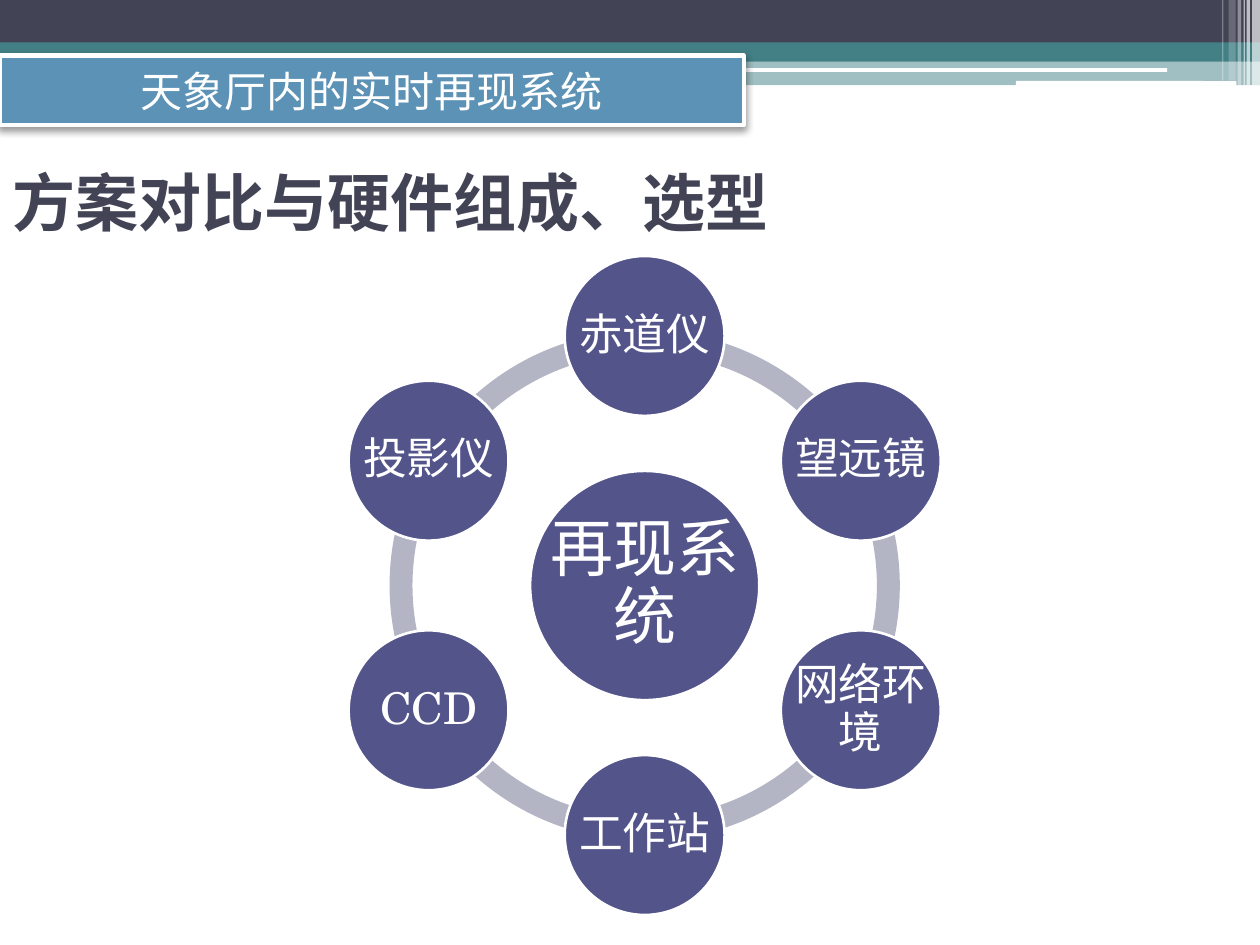
from math import cos, radians, sin

from lxml import etree
from pptx import Presentation
from pptx.dml.color import RGBColor
from pptx.enum.shapes import MSO_SHAPE
from pptx.enum.text import MSO_ANCHOR, MSO_AUTO_SIZE, PP_ALIGN
from pptx.oxml.ns import qn
from pptx.util import Pt

RECT, ROUND = MSO_SHAPE.RECTANGLE, MSO_SHAPE.ROUNDED_RECTANGLE
OVAL, ARC = MSO_SHAPE.OVAL, MSO_SHAPE.BLOCK_ARC
LEFT, CENTER = PP_ALIGN.LEFT, PP_ALIGN.CENTER
MIDDLE, NO_FIT = MSO_ANCHOR.MIDDLE, MSO_AUTO_SIZE.NONE

COLORS = {"dark": "424456", "teal": "438086", "white": "FFFFFF", "banner": "5C92B5",
          "ring": "B3B4C4", "node": "53548A", "black": "000000"}
CJK = "Noto Sans CJK SC"
SERIF = "TeX Gyre Schola"

BARS = [
    (0, 28.8, 720, 6.5, "teal", 50),
    (0, 0, 720, 24.5, "dark", 100),
    (0, 24.3, 720, 7.2, "teal", 100),
    (426, 28, 294, 7.2, "teal", 100),
    (426, 35.2, 294, 13.4, "teal", 50),
]
RULES = [(425.5, 38.9, 241.5, 2.2), (580.5, 46.3, 126, 2.7)]
STRIPES = [
    (715.5, 4.5, 48.9, 65),
    (712.3, 2, 48.9, 65),
    (710.7, 0.7, 48.9, 60),
    (707.2, 2, 48.9, 40),
    (702, 4.1, 46.1, 20),
    (698.4, 0.7, 46.1, 30),
]

HUB_X, HUB_Y = 368.4, 334.6
RING_SIZE, ORBIT = 291.6, 142.6
HUB_SIZE, NODE_SIZE = 131, 91.4
NODES = ["赤道仪", "望远镜", "网络环境", "工作站", "CCD", "投影仪"]


def rgb(name):
    return RGBColor.from_string(COLORS[name])


def add_shape(shapes, kind, box, fill, alpha=100, line=None, width=0):
    sp = shapes.add_shape(kind, *(Pt(v) for v in box))
    sp.shadow.inherit = False
    sp.fill.solid()
    sp.fill.fore_color.rgb = rgb(fill)
    if alpha < 100:
        clr = sp._element.spPr.find(qn("a:solidFill"))[0]
        etree.SubElement(clr, qn("a:alpha"), val=str(alpha * 1000))
    if line:
        sp.line.color.rgb = rgb(line)
        sp.line.width = Pt(width)
    else:
        sp.line.fill.background()
    return sp


def add_shadow(sp):
    effects = sp._element.spPr.find(qn("a:effectLst"))
    shadow = etree.SubElement(effects, qn("a:outerShdw"), blurRad=str(Pt(4.1)),
                              dist=str(Pt(2)), dir="5400000", rotWithShape="0")
    clr = etree.SubElement(shadow, qn("a:srgbClr"), val=COLORS["black"])
    etree.SubElement(clr, qn("a:alpha"), val="40000")


def write_text(sp, text, size, font, color="white", align=CENTER, bold=False,
               spacing=1.0, inset=None):
    tf = sp.text_frame
    frame = {"word_wrap": True, "auto_size": NO_FIT, "vertical_anchor": MIDDLE}
    if inset is not None:
        for side in ("left", "top", "right", "bottom"):
            frame[f"margin_{side}"] = Pt(inset)
    p = tf.paragraphs[0]
    r = p.add_run()
    r.text = text
    formats = [
        (tf, frame),
        (p, {"alignment": align, "line_spacing": spacing}),
        (r.font, {"size": Pt(size), "bold": bold, "name": font}),
    ]
    for target, values in formats:
        for name, value in values.items():
            setattr(target, name, value)
    r.font.color.rgb = rgb(color)
    latin = r._r.rPr.find(qn("a:latin"))
    ea = etree.Element(qn("a:ea"), typeface=CJK)
    latin.addnext(ea)


def add_header(shapes):
    for *box, fill, alpha in BARS:
        add_shape(shapes, RECT, box, fill, alpha)
    for box in RULES:
        add_shape(shapes, ROUND, box, "white")
    for x, width, height, alpha in STRIPES:
        add_shape(shapes, RECT, (x, 0, width, height), "white", alpha)


def add_title(shapes, text):
    sp = shapes.title
    box = {"left": 0, "top": 78.5, "width": 661.5, "height": 73.5}
    for name, value in box.items():
        setattr(sp, name, Pt(value))
    write_text(sp, text, 36, "Karla", "dark", LEFT, True)


def add_banner(shapes, text):
    sp = add_shape(shapes, RECT, (0, 31.8, 425, 39.7), "banner", line="white", width=2.5)
    add_shadow(sp)
    write_text(sp, text, 24, CJK)


def add_circle(shapes, x, y, size, text, font_size, inset):
    box = (x - size / 2, y - size / 2, size, size)
    add_shape(shapes, OVAL, box, "node", line="white", width=1.5)
    label = shapes.add_textbox(*(Pt(v) for v in box))
    write_text(label, text, font_size, SERIF, spacing=0.9, inset=inset)


def add_cycle(shapes):
    group = shapes.add_group_shape().shapes
    step = 360 / len(NODES)
    angles = [i * step - 90 for i in range(len(NODES))]
    box = (HUB_X - RING_SIZE / 2, HUB_Y - RING_SIZE / 2, RING_SIZE, RING_SIZE)
    for angle in angles:
        sp = add_shape(group, ARC, box, "ring")
        sp.adjustments[0] = angle % 360 * 0.6
        sp.adjustments[1] = (angle + step) % 360 * 0.6
        sp.adjustments[2] = 0.045
    add_circle(group, HUB_X, HUB_Y, HUB_SIZE, "再现系统", 36, 3.6)
    for angle, text in zip(angles, NODES):
        x = HUB_X + ORBIT * cos(radians(angle))
        y = HUB_Y + ORBIT * sin(radians(angle))
        add_circle(group, x, y, NODE_SIZE, text, 25, 2.3)


def main():
    prs = Presentation()
    prs.slide_width, prs.slide_height = Pt(720), Pt(540)
    shapes = prs.slides.add_slide(prs.slide_layouts[5]).shapes
    add_header(shapes)
    add_title(shapes, "方案对比与硬件组成、选型")
    add_banner(shapes, "天象厅内的实时再现系统")
    add_cycle(shapes)
    prs.save("out.pptx")


if __name__ == "__main__":
    main()
